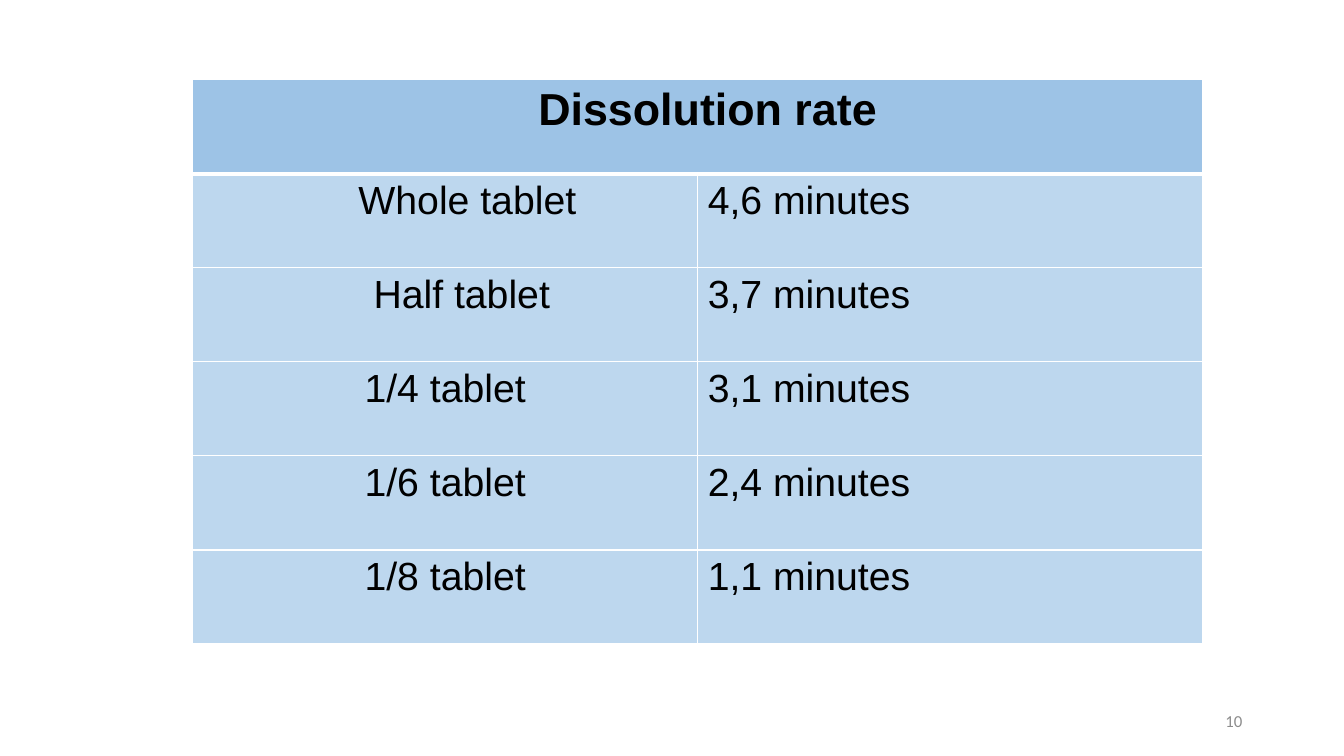
from lxml import etree
from pptx import Presentation
from pptx.dml.color import RGBColor
from pptx.enum.text import MSO_ANCHOR, PP_ALIGN
from pptx.oxml.ns import qn
from pptx.util import Inches, Pt

LEFT, CENTER, RIGHT = PP_ALIGN.LEFT, PP_ALIGN.CENTER, PP_ALIGN.RIGHT
MIDDLE = MSO_ANCHOR.MIDDLE

WHITE = RGBColor(0xFF, 0xFF, 0xFF)
BLACK = RGBColor(0x00, 0x00, 0x00)
GRAY = RGBColor(0x8C, 0x8C, 0x8C)
HEAD = RGBColor(0x9D, 0xC3, 0xE6)
BODY = RGBColor(0xBD, 0xD7, 0xEE)

PAD = 0.1
# Label, extra left indent in inches, time
RATES = [
    ("Whole tablet", 0.44, "4,6 minutes"),
    ("Half tablet", 0.33, "3,7 minutes"),
    ("1/4 tablet", 0, "3,1 minutes"),
    ("1/6 tablet", 0, "2,4 minutes"),
    ("1/8 tablet", 0, "1,1 minutes"),
]


class Page:
    """Holds the style and the current slide."""

    def __init__(self, deck, font="Arial"):
        self.font = font
        self.slide = deck.slides.add_slide(deck.slide_layouts[6])

    def text(self, frame, words, size, color=BLACK, align=LEFT, bold=False, font=None):
        para = frame.paragraphs[0]
        para.alignment = align
        run = para.add_run()
        run.text = words
        run.font.name = font or self.font
        run.font.size = Pt(size)
        run.font.bold = bold
        run.font.color.rgb = color

    def label(self, x, y, w, h, words, size, **style):
        box = self.slide.shapes.add_textbox(Inches(x), Inches(y), Inches(w), Inches(h))
        frame = box.text_frame
        frame.word_wrap = True
        frame.vertical_anchor = MIDDLE
        self.text(frame, words, size, **style)

    def table(self, x, y, w, h, rows, cols):
        frame = self.slide.shapes.add_table(
            rows, cols, Inches(x), Inches(y), Inches(w), Inches(h))
        return frame.table

    def cell(self, cell, fill, top=1, bottom=1):
        props = cell._tc.get_or_add_tcPr()
        for side, width in (("L", 1), ("R", 1), ("T", top), ("B", bottom)):
            line = etree.SubElement(props, qn(f"a:ln{side}"), w=str(Pt(width)))
            solid = etree.SubElement(line, qn("a:solidFill"))
            etree.SubElement(solid, qn("a:srgbClr"), val=str(WHITE))
        cell.fill.solid()
        cell.fill.fore_color.rgb = fill

    def entry(self, cell, words, size, indent=0, **style):
        cell.margin_left = Inches(PAD + indent)
        self.text(cell.text_frame, words, size, **style)


def main():
    deck = Presentation()
    deck.slide_width, deck.slide_height = Inches(13.33), Inches(7.5)
    page = Page(deck)

    # Slide number
    page.label(9.42, 6.95, 3, 0.4, "10", 12, color=GRAY, align=RIGHT, font="Calibri")

    # Table header
    table = page.table(1.91, 0.79, 10.02, 5.6, len(RATES) + 1, 2)
    for cell in table.rows[0].cells:
        page.cell(cell, HEAD, bottom=3)
    title = table.cell(0, 0)
    title.merge(table.cell(0, 1))
    page.entry(title, "Dissolution rate", 32, 0.2, align=CENTER, bold=True)

    # Table body
    for row, (name, indent, time) in enumerate(RATES, 1):
        for cell in table.rows[row].cells:
            page.cell(cell, BODY, top=3 if row == 1 else 1)
        page.entry(table.cell(row, 0), name, 28, indent, align=CENTER)
        page.entry(table.cell(row, 1), time, 28)

    deck.save("out.pptx")


if __name__ == "__main__":
    main()
